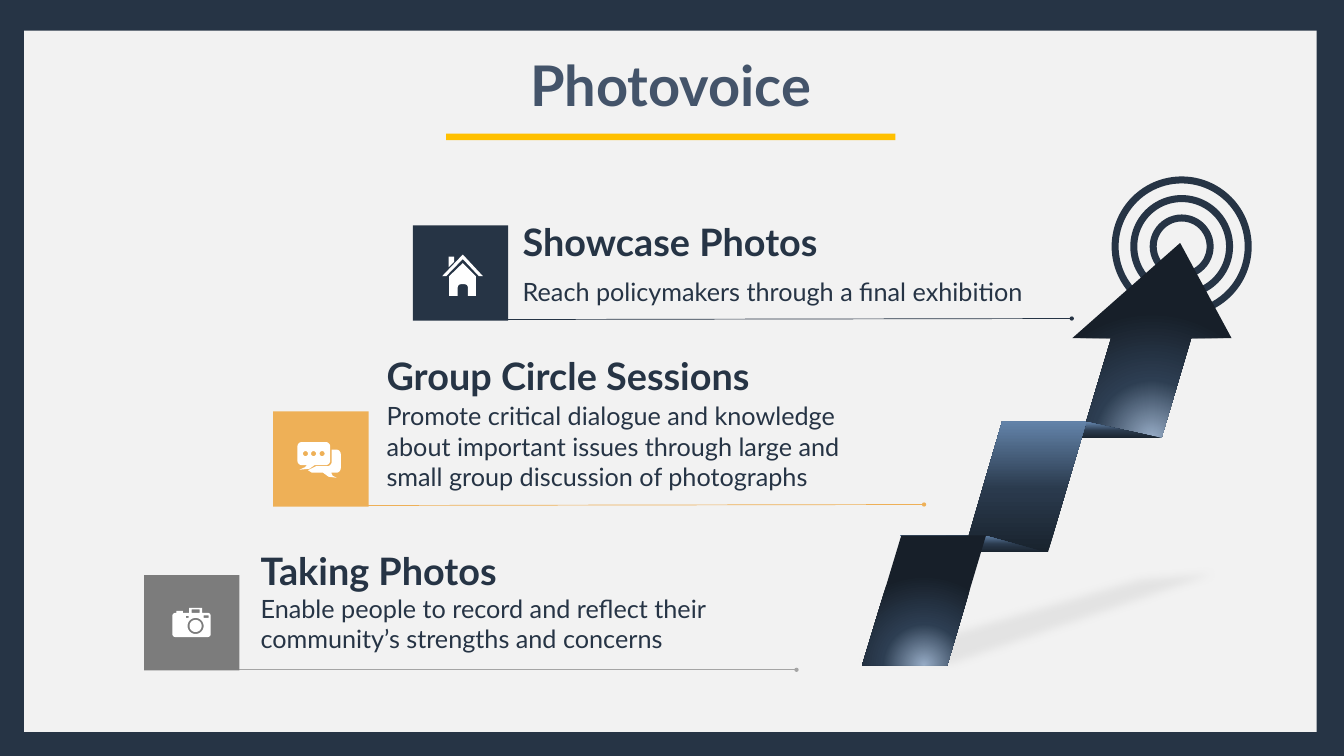
from dataclasses import dataclass
from math import cos, radians, sin

from lxml import etree
from pptx import Presentation
from pptx.dml.color import RGBColor
from pptx.enum.shapes import MSO_CONNECTOR, MSO_SHAPE
from pptx.enum.text import PP_ALIGN
from pptx.oxml.ns import qn
from pptx.util import Inches, Pt

RECT, OVAL = MSO_SHAPE.RECTANGLE, MSO_SHAPE.OVAL
STRAIGHT = MSO_CONNECTOR.STRAIGHT
LEFT, CENTER = PP_ALIGN.LEFT, PP_ALIGN.CENTER


@dataclass(frozen=True)
class Theme:
    font: str = "Lato"
    navy: str = "263445"
    paper: str = "F2F2F2"
    gold: str = "FFC000"
    slate: str = "44546A"
    amber: str = "EEB057"
    gray: str = "7C7C7C"
    gray_line: str = "A5A5A5"
    white: str = "FFFFFF"
    shade: str = "B9BAB8"
    glow: tuple = ((0, "97ACC6"), (46, "2D3E52"), (100, "171F29"))
    fade: tuple = ((0, "19232E"), (48, "2A3A4D"), (100, "6383A9"))
    title_size: int = 80
    heading_size: int = 54
    body_size: int = 36


THEME = Theme()


def rgb(colour):
    return RGBColor.from_string(colour)


def child(parent, tag, **attributes):
    element = etree.SubElement(parent, qn(tag))
    for name, value in attributes.items():
        element.set(name, str(value))
    return element


def paint(shape, colour):
    """Flat fill without outline or shadow."""
    shape.shadow.inherit = False
    shape.fill.solid()
    shape.fill.fore_color.rgb = rgb(colour)
    shape.line.fill.background()


def paint_gradient(shape, stops, radial):
    """Fill with stops, either glowing from below or rising from the foot."""
    paint(shape, stops[0][1])
    solid = shape._element.spPr.find(qn("a:solidFill"))
    gradient = etree.Element(qn("a:gradFill"), rotWithShape="1")
    stop_list = child(gradient, "a:gsLst")
    for position, colour in stops:
        stop = child(stop_list, "a:gs", pos=position * 1000)
        child(stop, "a:srgbClr", val=colour)
    if radial:
        circle = child(gradient, "a:path", path="circle")
        child(circle, "a:fillToRect", l=50000, t=130000, r=50000, b=-30000)
    else:
        child(gradient, "a:lin", ang=270 * 60000, scaled=0)
    solid.getparent().replace(solid, gradient)


def add_block(slide, left, top, width, height, colour):
    block = slide.shapes.add_shape(
        RECT, Inches(left), Inches(top), Inches(width), Inches(height))
    paint(block, colour)


def add_text(slide, box, words, size, colour, bold=False, align=LEFT):
    frame = slide.shapes.add_textbox(*map(Inches, box)).text_frame
    frame.word_wrap = True
    paragraph = frame.paragraphs[0]
    paragraph.alignment = align
    run = paragraph.add_run()
    run.text = words
    style = {"name": THEME.font, "size": Pt(size), "bold": bold}
    for name, value in style.items():
        setattr(run.font, name, value)
    run.font.color.rgb = rgb(colour)


def add_outline(slide, left, top, contours):
    """Freeform from contours in inches; inner contours become holes."""
    placed = [[(Inches(left + x), Inches(top + y)) for x, y in contour]
              for contour in contours]
    builder = slide.shapes.build_freeform(*placed[0][0])
    for index, (start, *others) in enumerate(placed):
        if index:
            builder.move_to(*start)
        builder.add_line_segments(others, close=True)
    return builder.convert_to_shape()


def arc(x, y, radius, start, end, steps=6):
    angles = [radians(start + (end - start) * i / steps) for i in range(steps + 1)]
    return [(x + radius * cos(a), y + radius * sin(a)) for a in angles]


def ring(x, y, radius):
    return arc(x, y, radius, 0, 360, 32)


def bar(x, y, width, height):
    return [(x, y), (x + width, y), (x + width, y + height), (x, y + height)]


def camera():
    body = (arc(.06, .16, .06, 180, 270)
            + [(.08, .10), (.08, .06), (.21, .06), (.21, .10), (.33, .10),
               (.33, 0), (.59, 0), (.59, .10)]
            + arc(.70, .16, .06, -90, 0) + arc(.70, .52, .06, 0, 90)
            + arc(.06, .52, .06, 90, 180))
    return [body, ring(.46, .36, .16), ring(.46, .36, .12),
            bar(.27, .16, .05, .04), bar(.62, .15, .10, .05),
            bar(.38, .03, .16, .07)]


def chat():
    front = (arc(.09, .09, .09, 180, 270) + arc(.56, .09, .09, -90, 0)
             + arc(.56, .37, .09, 0, 90)
             + [(.34, .46), (.24, .53), (.04, .55), (.15, .50), (.19, .46)]
             + arc(.09, .37, .09, 90, 180))
    back = (arc(.77, .24, .09, -90, 0) + arc(.77, .52, .09, 0, 90)
            + [(.67, .61), (.70, .67), (.78, .71), (.62, .69), (.51, .61),
               (.29, .61), (.21, .56), (.37, .48)]
            + arc(.59, .39, .09, 90, 0) + [(.68, .15)])
    return [front, back] + [ring(x, .23, .05) for x in (.16, .32, .49)]


def house():
    walls = ([(.41, .17), (.67, .43), (.67, .82), (.51, .82)]
             + arc(.45, .65, .06, 0, -90) + arc(.37, .65, .06, -90, -180)
             + [(.31, .82), (.14, .82), (.14, .43)])
    chimney = [(.13, .04), (.24, .04), (.24, .14), (.13, .25)]
    roof = [(.41, 0), (.81, .43), (.73, .43), (.41, .09), (.08, .43), (0, .43)]
    return [walls, chimney, roof]


def add_leader(slide, start, end, colour):
    leader = slide.shapes.add_connector(STRAIGHT, *map(Inches, start + end))
    leader.line.width = Pt(1)
    leader.line.color.rgb = rgb(colour)
    child(leader.line._get_or_add_ln(), "a:tailEnd", type="oval")
    child(leader._element.spPr, "a:effectLst")


def add_step(slide, left, top, step):
    """Tile with icon, heading, body and leader line, from the tile's corner."""
    tile, text_width = 1.89, 10.19
    (start_x, start_y), (end_x, end_y) = step["leader"]
    add_leader(slide, (left + start_x, top + start_y),
               (left + end_x, top + end_y), step["line"])
    text_left = left + step["indent"]
    add_text(slide, (text_left, top + step["body_top"], text_width, step["body_height"]),
             step["body"], THEME.body_size, THEME.navy)
    add_text(slide, (text_left, top + step["heading_top"], text_width, 1.01),
             step["heading"], THEME.heading_size, THEME.navy, bold=True)
    add_block(slide, left, top, tile, tile, step["colour"])
    icon_x, icon_y = step["icon_at"]
    paint(add_outline(slide, left + icon_x, top + icon_y, step["icon"]), THEME.white)


def add_header(slide, left, top, width):
    add_text(slide, (left, top, width, 1.45), "Photovoice",
             THEME.title_size, THEME.slate, bold=True, align=CENTER)
    rule = 8.91
    add_block(slide, left + (width - rule) / 2, top + 1.7, rule, .13, THEME.gold)


def add_ground_shadow(slide, left, top):
    shadow = add_outline(slide, left, top, [
        [(0, 2.1), (2.85, 2.21), (3.09, 2.19), (9.49, 0), (6.46, .23)]])
    paint(shadow, THEME.shade)
    colour = shadow._element.spPr.find(".//" + qn("a:srgbClr"))
    child(colour, "a:alpha", val=25000)
    effects = shadow._element.spPr.find(qn("a:effectLst"))
    child(effects, "a:softEdge", rad=Pt(12))


def add_target_arrow(slide, left, top):
    """Target rings with the folded ribbon arrow climbing to them."""
    for size in (1.9, 1.13, 2.64):
        corner = 1.32 - size / 2
        circle = slide.shapes.add_shape(
            OVAL, Inches(left + 5.02 + corner), Inches(top + corner),
            Inches(size), Inches(size))
        circle.shadow.inherit = False
        circle.fill.background()
        circle.line.color.rgb = rgb(THEME.navy)
        circle.line.width = Pt(10)

    head = [(6.31, 1.25), (7.33, 3.14), (6.53, 3.14), (5.94, 5.12),
            (4.35, 5.12), (4.94, 3.14), (4.17, 3.14)]
    upper_fold = [(5.93, 5.12), (4.49, 4.81), (2.81, 4.81), (3.81, 5.13)]
    middle = [(2.78, 4.79), (4.45, 4.79), (3.69, 7.38), (2.02, 7.38)]
    lower_fold = [(3.65, 7.39), (2.48, 7.07), (.76, 7.05), (1.68, 7.37)]
    foot = [(.78, 7.05), (2.46, 7.05), (1.69, 9.63), (0, 9.63)]
    for part, stops in ((head, THEME.glow), (upper_fold, THEME.fade),
                        (middle, THEME.fade), (lower_fold, THEME.fade),
                        (foot, THEME.glow)):
        paint_gradient(add_outline(slide, left, top, [part]), stops,
                       radial=stops is THEME.glow)


STEPS = (
    (2.86, 11.41, dict(
        heading="Taking Photos", heading_top=-.6, indent=2.21,
        body="Enable people to record and reflect their community’s strengths and concerns",
        body_top=.31, body_height=1.31, colour=THEME.gray, line=THEME.gray_line,
        leader=((1.62, 1.88), (12.94, 1.88)), icon=camera(), icon_at=(.56, .65))),
    (5.42, 8.16, dict(
        heading="Group Circle Sessions", heading_top=-1.22, indent=2.15,
        body="Promote critical dialogue and knowledge about important issues "
             "through large and small group discussion of photographs",
        body_top=-.26, body_height=1.92, colour=THEME.amber, line=THEME.amber,
        leader=((1.73, 1.87), (12.91, 1.85)), icon=chat(), icon_at=(.48, .61))),
    (8.19, 4.47, dict(
        heading="Showcase Photos", heading_top=-.18, indent=2.08,
        body="Reach policymakers through a final exhibition",
        body_top=.97, body_height=.71, colour=THEME.navy, line=THEME.navy,
        leader=((1.89, 1.87), (13.07, 1.85)), icon=house(), icon_at=(.58, .58))),
)


def main():
    deck = Presentation()
    deck.slide_width, deck.slide_height = Inches(26.66), Inches(15)
    slide = deck.slides.add_slide(deck.slide_layouts[6])
    add_block(slide, 0, 0, 26.66, 15, THEME.navy)
    add_block(slide, .48, .61, 25.64, 13.91, THEME.paper)
    add_header(slide, 7.82, .95, 10.97)
    add_ground_shadow(slide, 15.98, 11.1)
    add_target_arrow(slide, 17.1, 3.57)
    for left, top, step in STEPS:
        add_step(slide, left, top, step)
    deck.save("out.pptx")


if __name__ == "__main__":
    main()
